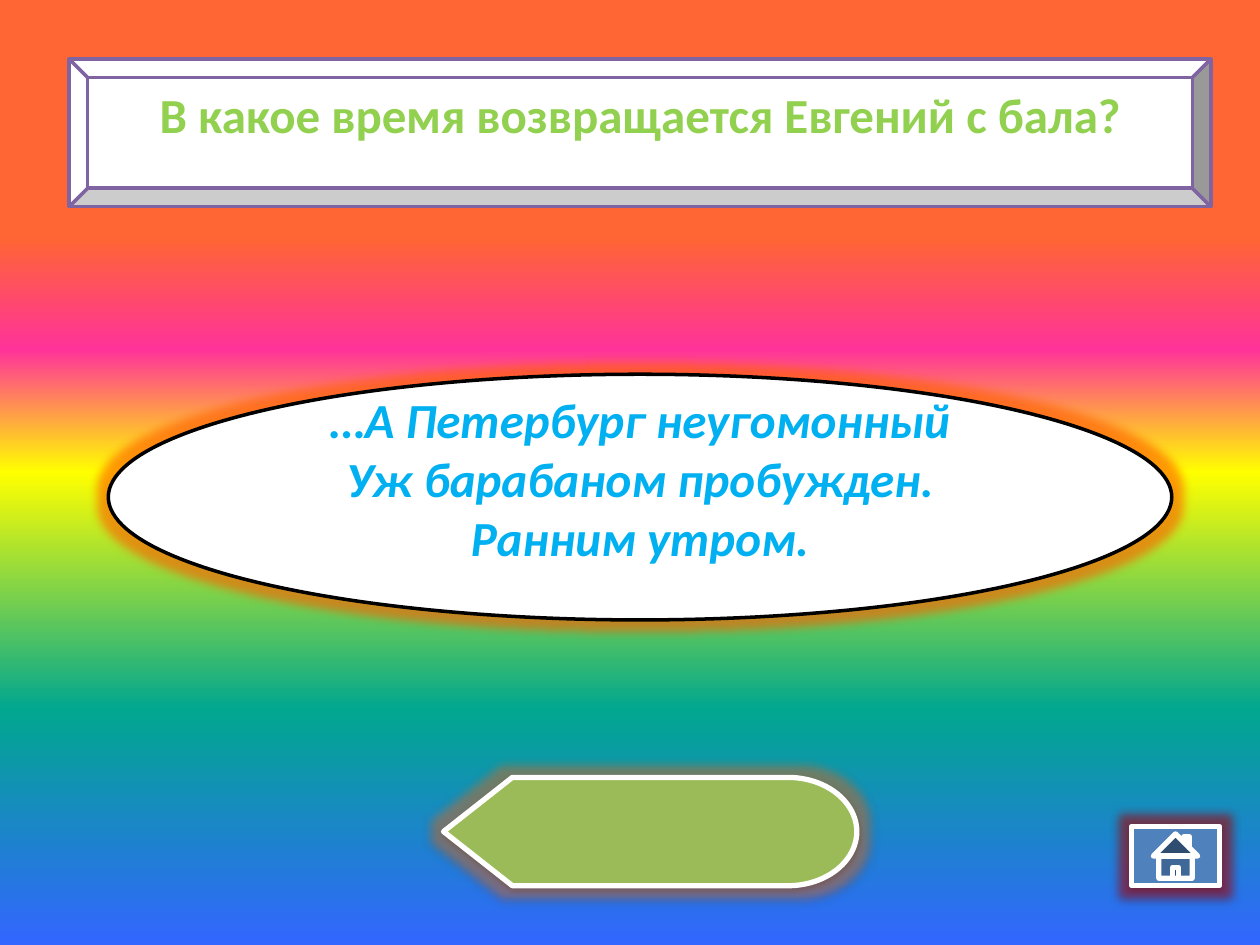
import pptx
import pptx.dml.color
import pptx.enum.shapes
import pptx.enum.text
import pptx.oxml.ns
import pptx.util
from lxml import etree

Inches = pptx.util.Inches
Pt = pptx.util.Pt
KIND = pptx.enum.shapes.MSO_SHAPE
qn = pptx.oxml.ns.qn

COLORS = {
    "white": "FFFFFF", "black": "000000", "purple": "8064A2",
    "lime": "92D050", "sky": "00B0F0", "olive": "9BBB59", "blue": "4F81BD",
    "flame": "FF5A00", "amber": "FF7A20", "red": "C00000",
}
RAINBOW = [(25, "FF6633"), (37, "FF3399"), (50, "FFFF00"),
           (75, "01A78F"), (100, "3366FF")]


def tint(parent, code, alpha=100):
    color = etree.SubElement(parent, qn("a:srgbClr"), val=code)
    if alpha < 100:
        etree.SubElement(color, qn("a:alpha"), val=str(alpha * 1000))


class Card:
    """Holds the quiz style and the slide being filled."""

    def __init__(self, deck, font="Calibri", size=28):
        self.slide = deck.slides.add_slide(deck.slide_layouts[6])
        self.font = font
        self.size = size

    def color(self, name):
        return pptx.dml.color.RGBColor.from_string(COLORS[name])

    def backdrop(self, stops):
        fill = self.slide.background.fill
        fill.gradient()
        fill.gradient_angle = 270
        group = next(self.slide.element.iter(qn("a:gsLst")))
        for old in list(group):
            group.remove(old)
        for place, code in stops:
            stop = etree.SubElement(group, qn("a:gs"), pos=str(place * 1000))
            tint(stop, code)

    def shape(self, kind, box, fill, line, width):
        item = self.slide.shapes.add_shape(kind, *map(Inches, box))
        item.fill.solid()
        item.fill.fore_color.rgb = self.color(fill)
        item.line.color.rgb = self.color(line)
        item.line.width = Pt(width)
        item.shadow.inherit = False
        return item

    def glow(self, item, name, alpha):
        effects = item._element.spPr.find(qn("a:effectLst"))
        halo = etree.SubElement(effects, qn("a:glow"), rad=str(Pt(11)))
        tint(halo, COLORS[name], alpha)

    def shadow(self, item):
        effects = item._element.spPr.find(qn("a:effectLst"))
        drop = etree.SubElement(
            effects, qn("a:outerShdw"), blurRad=str(Pt(3.1)),
            dist=str(Pt(1.6)), dir="5400000", rotWithShape="0")
        tint(drop, COLORS["black"], 38)

    def text(self, item, lines, color, italic=False):
        """Centre bold lines, raised a little by a deep bottom margin."""
        frame = item.text_frame
        frame.word_wrap = True
        frame.vertical_anchor = pptx.enum.text.MSO_ANCHOR.MIDDLE
        frame.margin_bottom = Inches(0.35)
        frame.text = "\n".join(lines)
        for para in frame.paragraphs:
            para.alignment = pptx.enum.text.PP_ALIGN.CENTER
            para.font.name = self.font
            para.font.size = Pt(self.size)
            para.font.bold = True
            para.font.italic = italic
            para.font.color.rgb = self.color(color)


def main():
    deck = pptx.Presentation()
    deck.slide_width, deck.slide_height = Inches(10), Inches(7.5)
    card = Card(deck)
    card.backdrop(RAINBOW)

    query = card.shape(KIND.BEVEL, (0.55, 0.47, 9.06, 1.17),
                       "white", "purple", 2)
    card.text(query, ["В какое время возвращается Евгений с бала?"], "lime")

    back = card.shape(KIND.FLOWCHART_DISPLAY, (3.52, 6.17, 3.28, 0.86),
                      "olive", "white", 3)
    card.glow(back, "amber", 40)
    card.shadow(back)

    reply = card.shape(KIND.FLOWCHART_CONNECTOR, (0.86, 2.97, 8.44, 1.95),
                       "white", "black", 2)
    card.glow(reply, "flame", 60)
    card.text(reply, ["…А Петербург неугомонный",
                      "Уж барабаном пробужден. Ранним утром."],
              "sky", italic=True)

    home = card.shape(KIND.ACTION_BUTTON_HOME, (8.98, 6.56, 0.7, 0.47),
                      "blue", "white", 3)
    card.glow(home, "red", 50)
    card.shadow(home)

    deck.save("out.pptx")


if __name__ == "__main__":
    main()
